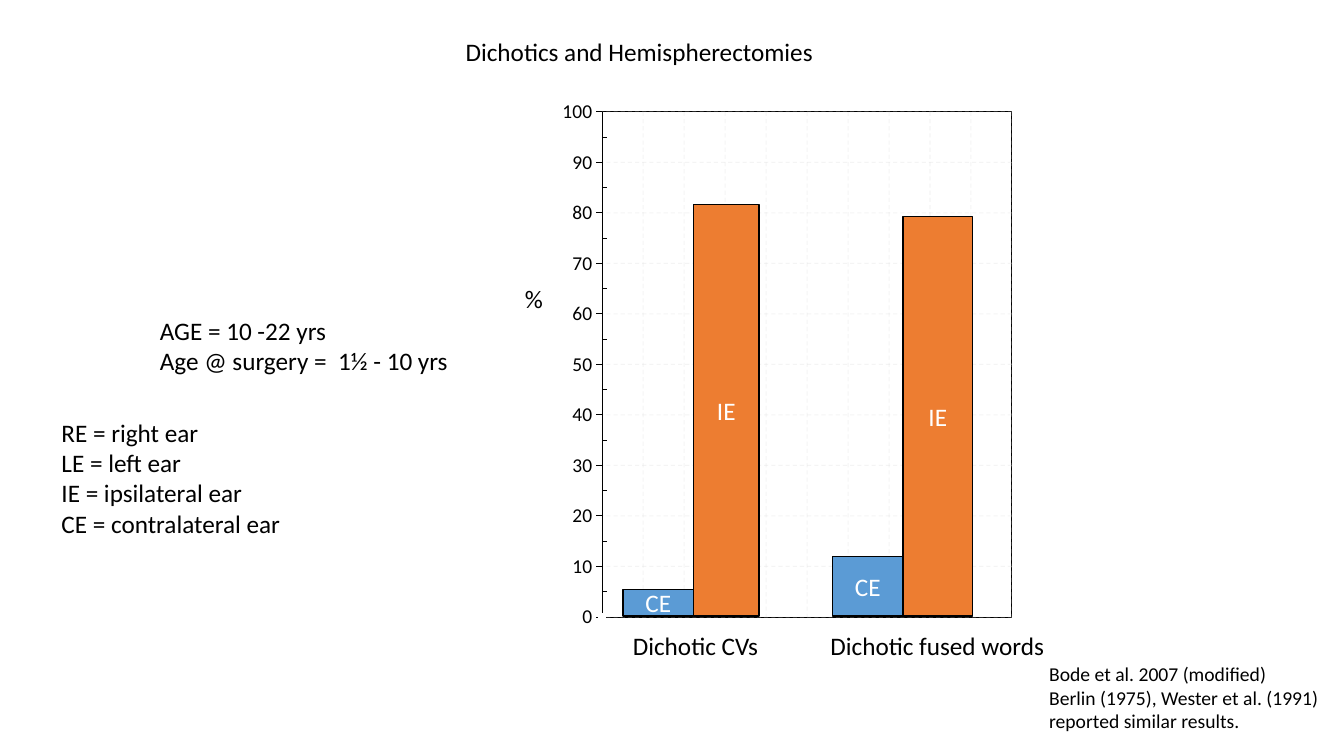
from dataclasses import dataclass

from lxml import etree
from pptx import Presentation
from pptx import util as u
from pptx.chart.data import XyChartData
from pptx.dml.color import RGBColor
from pptx.enum import chart as charts, dml, shapes, text
from pptx.oxml import parse_xml
from pptx.oxml.ns import nsdecls, qn


@dataclass(frozen=True)
class Theme:
    font: str = "Calibri"
    ink: str = "000000"
    bar_text: str = "FFFFFF"
    contralateral: str = "5B9BD5"
    ipsilateral: str = "ED7D31"
    grid: str = "D9D9D9"
    body: int = 18
    small: int = 14
    chart: int = 10


THEME = Theme()
BASELINE = 15.52  # cm, zero level of the bars

# label, fill, left, width, height in cm
BARS = [
    ("IE", THEME.ipsilateral, 17.48, 1.65, 10.36),
    ("CE", THEME.contralateral, 15.7, 1.78, 0.66),
    ("CE", THEME.contralateral, 20.98, 1.78, 1.49),
    ("IE", THEME.ipsilateral, 22.76, 1.75, 10.06),
]

# lines, size, left, top, width, height in cm
NOTES = [
    (["Bode et al. 2007 (modified)", "Berlin (1975), Wester et al. (1991)",
      "reported similar results."], THEME.small, 26.19, 16.56, 7.39, 2.06),
    (["AGE = 10 -22 yrs", "Age @ surgery =  1½ - 10 yrs"],
     THEME.body, 3.78, 7.82, 8, 1.8),
    (["RE = right ear", "LE = left ear", "IE = ipsilateral ear",
      "CE = contralateral ear"], THEME.body, 1.3, 10.39, 6.1, 3.33),
    (["Dichotic CVs"], THEME.body, 15.7, 15.77, 3.71, 1.02),
    (["Dichotic fused words"], THEME.body, 20.68, 15.77, 5.97, 1.02),
    (["%"], THEME.body, 12.98, 7.01, 0.97, 1.02),
]


def rgb(value):
    return RGBColor.from_string(value)


def set_font(font, size, color=THEME.ink):
    font.name, font.size = THEME.font, u.Pt(size)
    font.color.rgb = rgb(color)


def set_line(line, color, width):
    line.color.rgb = rgb(color)
    line.width = u.Pt(width)


def fill_text(frame, lines, size):
    """Write left-aligned, unwrapped lines, one paragraph each."""
    frame.text = "\n".join(lines)
    frame.word_wrap = False
    frame.vertical_anchor = text.MSO_ANCHOR.TOP
    for paragraph in frame.paragraphs:
        paragraph.alignment = text.PP_ALIGN.LEFT
        set_font(paragraph.font, size)


def add_title(slide, wording):
    title = slide.shapes.title
    title.left, title.top = u.Cm(11.48), u.Cm(0.79)
    title.width, title.height = u.Cm(9.37), u.Cm(1.02)
    fill_text(title.text_frame, [wording], THEME.body)


def add_note(slide, lines, size, *box):
    note = slide.shapes.add_textbox(*map(u.Cm, box))
    fill_text(note.text_frame, lines, size)
    note.text_frame.auto_size = text.MSO_AUTO_SIZE.SHAPE_TO_FIT_TEXT


def add_bar(slide, label, fill, left, width, height):
    bar = slide.shapes.add_shape(
        shapes.MSO_SHAPE.RECTANGLE, u.Cm(left), u.Cm(BASELINE - height),
        u.Cm(width), u.Cm(height))
    bar.shadow.inherit = False
    bar.fill.solid()
    bar.fill.fore_color.rgb = rgb(fill)
    set_line(bar.line, THEME.ink, 1)
    bar.text_frame.text = label
    bar.text_frame.vertical_anchor = text.MSO_ANCHOR.MIDDLE
    paragraph = bar.text_frame.paragraphs[0]
    paragraph.alignment = text.PP_ALIGN.CENTER
    set_font(paragraph.font, THEME.body, THEME.bar_text)


def format_axis(axis):
    """Scale to 0-100 with faint dashed gridlines every 10."""
    axis.minimum_scale, axis.maximum_scale = 0, 100
    axis.major_unit, axis.minor_unit = 10, 5
    axis.has_major_gridlines = True
    line = axis.major_gridlines.format.line
    set_line(line, THEME.grid, 0.75)
    line.dash_style = dml.MSO_LINE.DASH
    for color in axis.major_gridlines._xAx.iterfind(
            f"{qn('c:majorGridlines')}//{qn('a:srgbClr')}"):
        etree.SubElement(color, qn("a:alpha")).set("val", "27000")


def frame_plot(chart):
    """Fix the inner plot area and outline it."""
    area = chart.element.find(f".//{qn('c:plotArea')}")
    for layout in area.findall(qn("c:layout")):
        area.remove(layout)
    places = "".join(f'<c:{name} val="{value}"/>' for name, value in [
        ("layoutTarget", "inner"), ("xMode", "edge"), ("yMode", "edge"),
        ("x", 0.074), ("y", 0.035), ("w", 0.832), ("h", 0.93)])
    area.insert(0, parse_xml(
        f"<c:layout {nsdecls('c')}><c:manualLayout>{places}"
        "</c:manualLayout></c:layout>"))
    area.append(parse_xml(
        f"<c:spPr {nsdecls('c', 'a')}><a:noFill/><a:ln w=\"9525\"><a:solidFill>"
        f"<a:srgbClr val=\"{THEME.ink}\"/></a:solidFill></a:ln></c:spPr>"))


def add_percent_scale(slide):
    data = XyChartData()
    points = data.add_series("Series 1")
    for _ in range(4):
        points.add_data_point(0, 0)
    chart = slide.shapes.add_chart(
        charts.XL_CHART_TYPE.XY_SCATTER, u.Cm(14.17), u.Cm(2.34),
        u.Cm(12.5), u.Cm(13.69), data).chart
    chart.has_title = chart.has_legend = False
    set_font(chart.font, THEME.chart)

    plot = chart.plots[0]
    plot.vary_by_categories = False
    series = plot.series[0]
    series.format.line.fill.background()
    series.marker.style = charts.XL_MARKER_STYLE.CIRCLE
    series.marker.size = 5
    series.marker.format.fill.background()
    series.marker.format.line.fill.background()

    percent = chart.value_axis
    for axis in (chart.category_axis, percent):
        format_axis(axis)
    chart.category_axis.visible = False
    percent.major_tick_mark = charts.XL_TICK_MARK.OUTSIDE
    percent.minor_tick_mark = charts.XL_TICK_MARK.INSIDE
    set_font(percent.tick_labels.font, THEME.small)
    set_line(percent.format.line, THEME.ink, 0.75)
    frame_plot(chart)


def main():
    presentation = Presentation()
    presentation.slide_width = u.Cm(33.87)
    presentation.slide_height = u.Cm(19.05)
    slide = presentation.slides.add_slide(presentation.slide_layouts[5])
    add_title(slide, "Dichotics and Hemispherectomies")
    add_percent_scale(slide)
    for bar in BARS:
        add_bar(slide, *bar)
    for note in NOTES:
        add_note(slide, *note)
    presentation.save("out.pptx")


if __name__ == "__main__":
    main()
